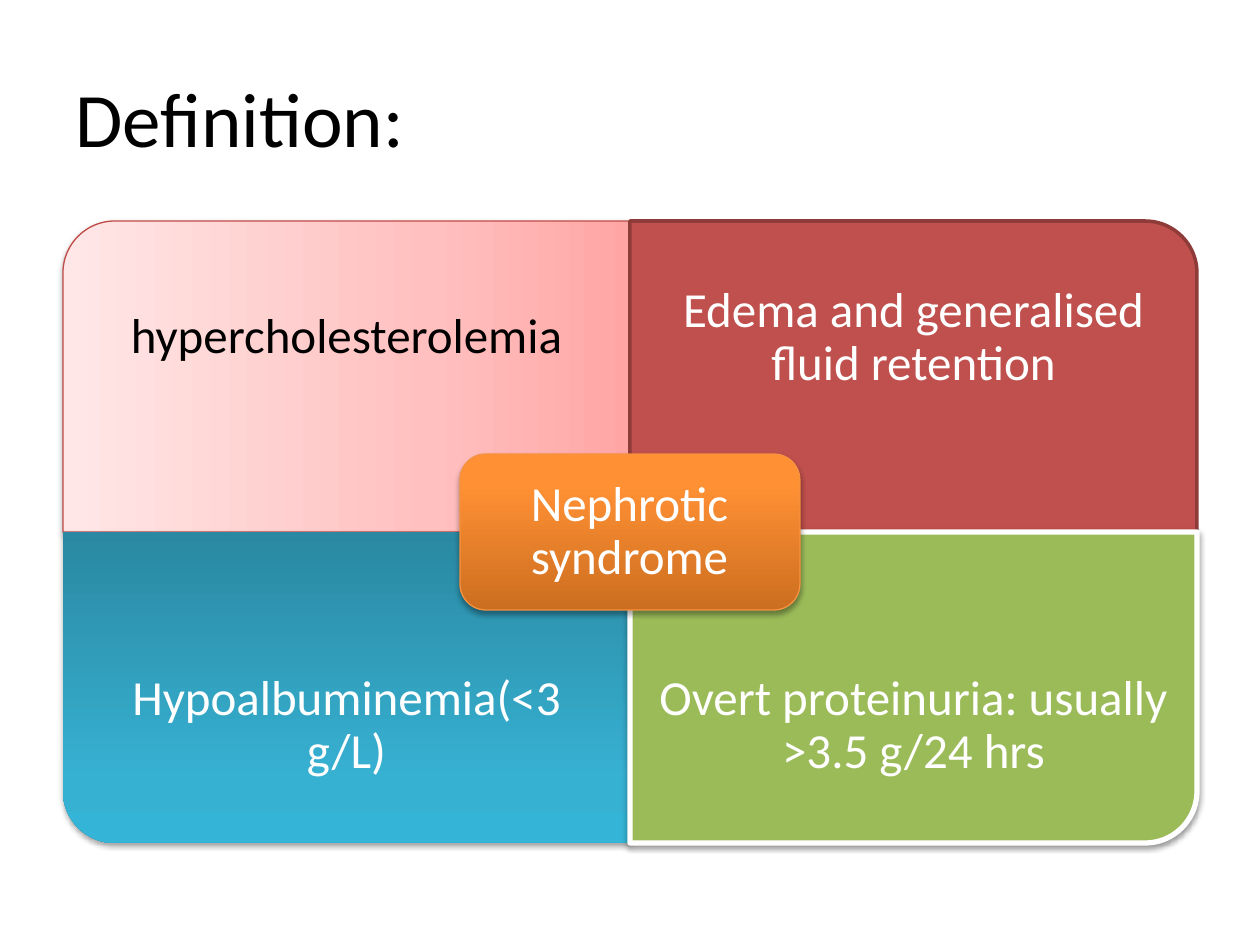
from copy import deepcopy

from lxml import etree
from pptx import Presentation
from pptx import util as u
from pptx.dml.color import RGBColor
from pptx.enum import shapes, text
from pptx.oxml.ns import qn

LEFT, TOP, WIDTH, HEIGHT = 63, 221, 567, 311
LABEL_HEIGHT = 234
PINK = [(0, "FFA6A5"), (0.35, "FFC0BF"), (1, "FFE7E7")]
BLUE = [(0, "2A88A2"), (0.8, "37B1D2"), (1, "34B4D6")]
ORANGE = [(0, "CC6E20"), (0.8, "FF9034"), (1, "FF9136")]
SOFT_SHADOW = (38, 1.6)
STRONG_SHADOW = (35, 1.8)

QUADRANTS = [
    (0, 0, 270, PINK, ("BF4C48", 0.75), SOFT_SHADOW,
     "hypercholesterolemia", "000000"),
    (1, 0, 0, "C0504D", ("8E3B39", 2), None,
     "Edema and generalised fluid retention", "FFFFFF"),
    (0, 1, 180, BLUE, None, STRONG_SHADOW,
     "Hypoalbuminemia(<3 g/L)", "FFFFFF"),
    (1, 1, 90, "9BBB59", ("FFFFFF", 3), SOFT_SHADOW,
     "Overt proteinuria: usually >3.5 g/24 hrs", "FFFFFF"),
]


def px(length):
    return u.Emu(round(length * 914400 / 126))


def color(value):
    return RGBColor.from_string(value)


def paint(shape, fill):
    if isinstance(fill, str):
        shape.fill.solid()
        shape.fill.fore_color.rgb = color(fill)
        return
    shape.fill.gradient()
    shape.fill.gradient_angle = 90
    stop_list = shape._element.spPr.find(".//" + qn("a:gsLst"))
    stop_list.insert(1, deepcopy(stop_list[0]))
    for stop, (position, value) in zip(shape.fill.gradient_stops, fill):
        stop.position = position
        stop.color.rgb = color(value)


def outline(shape, line):
    if line is None:
        shape.line.fill.background()
        return
    value, weight = line
    shape.line.color.rgb = color(value)
    shape.line.width = u.Pt(weight)


def cast_shadow(shape, shadow):
    shape.shadow.inherit = False
    if shadow is None:
        return
    opacity, distance = shadow
    effects = shape._element.spPr.find(qn("a:effectLst"))
    outer = etree.SubElement(
        effects, qn("a:outerShdw"), blurRad=str(u.Pt(3.1)),
        dist=str(u.Pt(distance)), dir="5400000", rotWithShape="0")
    black = etree.SubElement(outer, qn("a:srgbClr"), val="000000")
    etree.SubElement(black, qn("a:alpha"), val=str(opacity * 1000))


def add_panel(slide, kind, left, top, width, height, fill, line, shadow):
    panel = slide.shapes.add_shape(
        kind, px(left), px(top), px(width), px(height))
    paint(panel, fill)
    outline(panel, line)
    cast_shadow(panel, shadow)
    return panel


def add_label(slide, left, top, width, height, inset, words, ink):
    box = slide.shapes.add_textbox(px(left), px(top), px(width), px(height))
    frame = box.text_frame
    frame.word_wrap = True
    frame.vertical_anchor = text.MSO_ANCHOR.MIDDLE
    frame.margin_left = frame.margin_right = px(inset)
    frame.margin_top = frame.margin_bottom = px(inset)
    para = frame.paragraphs[0]
    para.text = words
    para.alignment = text.PP_ALIGN.CENTER
    para.line_spacing = 0.9
    para.font.name = "Calibri"
    para.font.size = u.Pt(28)
    para.font.color.rgb = color(ink)


def add_quadrant(slide, column, row, turn, fill, line, shadow, words, ink):
    left = LEFT + column * WIDTH
    top = TOP + row * HEIGHT
    width, height = (HEIGHT, WIDTH) if turn % 180 else (WIDTH, HEIGHT)
    panel = add_panel(
        slide, shapes.MSO_SHAPE.ROUND_1_RECTANGLE,
        left + (WIDTH - width) / 2, top + (HEIGHT - height) / 2,
        width, height, fill, line, shadow)
    panel.rotation = turn
    label_top = top + row * (HEIGHT - LABEL_HEIGHT)
    add_label(slide, left, label_top, WIDTH, LABEL_HEIGHT, 28, words, ink)


def add_center(slide):
    add_panel(slide, shapes.MSO_SHAPE.ROUNDED_RECTANGLE, 460, 454, 340, 156,
              ORANGE, ("F69240", 0.75), STRONG_SHADOW)
    add_label(slide, 467, 462, 325, 141, 15, "Nephrotic syndrome", "FFFFFF")


def set_title(slide, words):
    title = slide.shapes.title
    title.left, title.top = px(63), px(38)
    title.width, title.height = px(1134), px(157)
    title.text_frame.vertical_anchor = text.MSO_ANCHOR.MIDDLE
    para = title.text_frame.paragraphs[0]
    para.text = words
    para.alignment = text.PP_ALIGN.LEFT
    para.font.name = "Calibri"
    para.font.size = u.Pt(44)
    para.font.color.rgb = color("000000")


def main():
    deck = Presentation()
    deck.slide_width, deck.slide_height = px(1260), px(945)
    slide = deck.slides.add_slide(deck.slide_layouts[5])
    set_title(slide, "Definition:")
    for quadrant in QUADRANTS:
        add_quadrant(slide, *quadrant)
    add_center(slide)
    deck.save("out.pptx")


if __name__ == "__main__":
    main()
